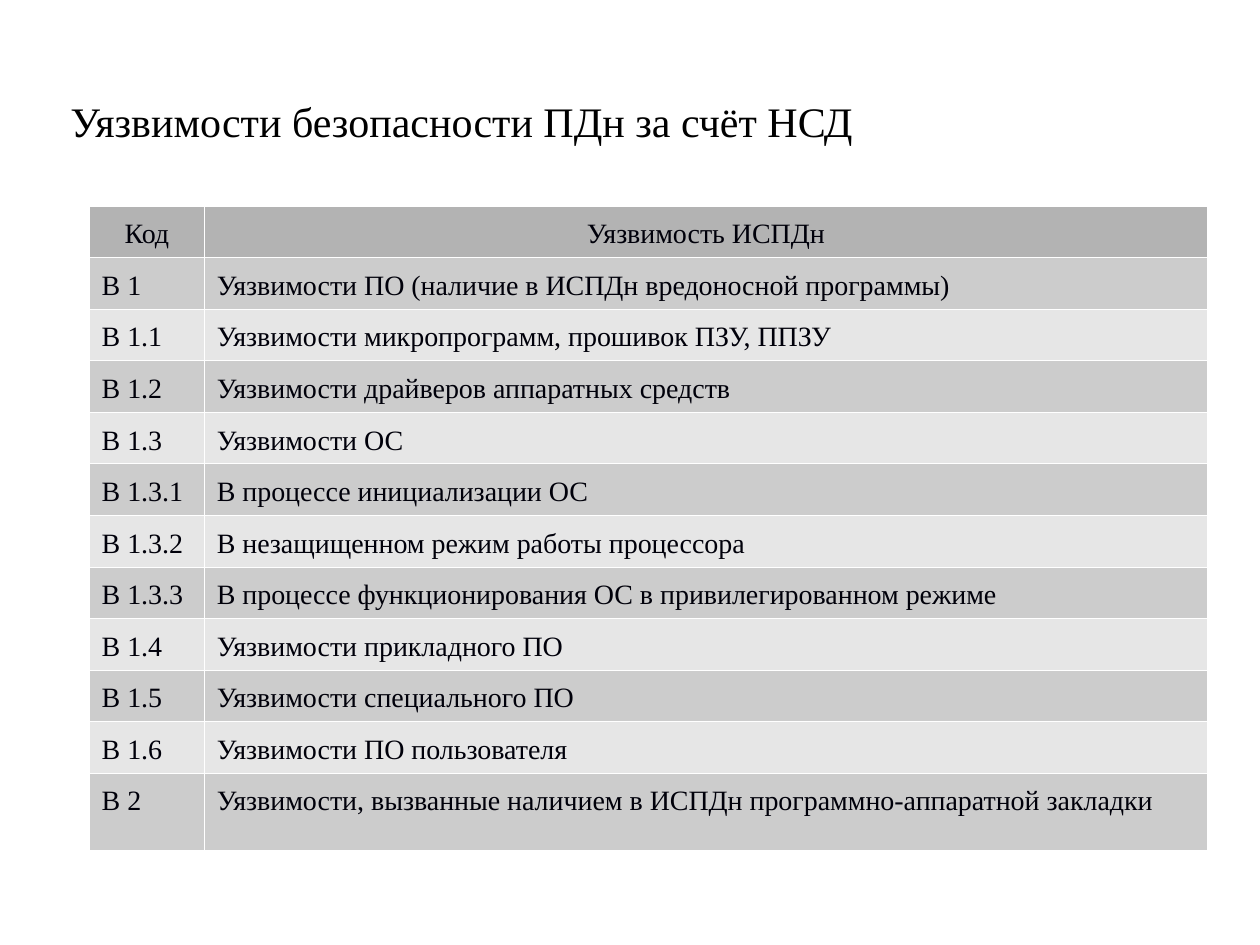
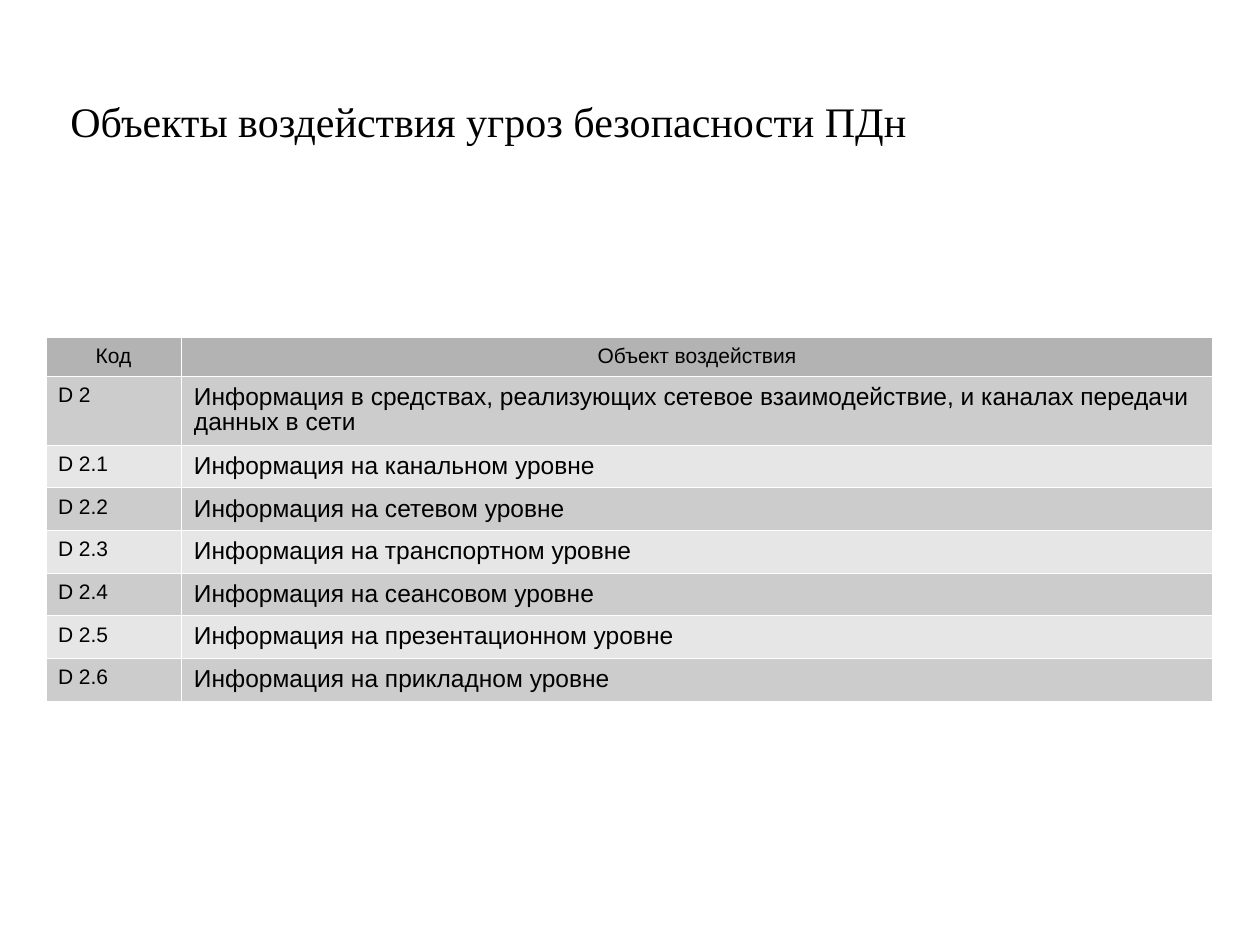
from dataclasses import dataclass

import pptx
import pptx.dml.color
import pptx.enum.text
import pptx.oxml
import pptx.oxml.ns
import pptx.util
from pptx.util import Cm


@dataclass(frozen=True)
class Theme:
    title_font: str = "Times New Roman"
    title_size: int = 24
    title_color: str = "000000"
    header_fill: str = "B3B3B3"
    band_fills: tuple = ("CCCCCC", "E6E6E6")
    border_color: str = "FFFFFF"
    border_width: float = 0.06


@dataclass(frozen=True)
class TableStyle:
    font: str
    color: str
    code_size: int
    text_size: int
    line_spacing: float
    top_margin: float


THEME = Theme()
SERIF_TABLE = TableStyle("Times New Roman", "00000A", 16, 16, 0.81, 0.36)
SANS_TABLE = TableStyle("Arial", "000000", 12, 14, 0.89, 0.2)

VULNERABILITIES = [
    ("Код", "Уязвимость ИСПДн"),
    ("В 1", "Уязвимости ПО (наличие в ИСПДн вредоносной программы)"),
    ("В 1.1", "Уязвимости микропрограмм, прошивок ПЗУ, ППЗУ"),
    ("В 1.2", "Уязвимости драйверов аппаратных средств"),
    ("В 1.3", "Уязвимости ОС"),
    ("В 1.3.1", "В процессе инициализации ОС"),
    ("В 1.3.2", "В незащищенном режим работы процессора"),
    ("В 1.3.3", "В процессе функционирования ОС в привилегированном режиме"),
    ("В 1.4", "Уязвимости прикладного ПО"),
    ("В 1.5", "Уязвимости специального ПО"),
    ("В 1.6", "Уязвимости ПО пользователя"),
    ("В 2", "Уязвимости, вызванные наличием в ИСПДн программно-аппаратной закладки"),
]

TARGETS = [
    ("Код", "Объект воздействия"),
    ("D 2", "Информация в средствах, реализующих сетевое взаимодействие, "
            "и каналах передачи данных в сети"),
    ("D 2.1", "Информация на канальном уровне"),
    ("D 2.2", "Информация на сетевом уровне"),
    ("D 2.3", "Информация на транспортном уровне"),
    ("D 2.4", "Информация на сеансовом уровне"),
    ("D 2.5", "Информация на презентационном уровне"),
    ("D 2.6", "Информация на прикладном уровне"),
]


class Deck:
    def __init__(self, theme):
        self.theme = theme
        self.presentation = pptx.Presentation()
        self.presentation.slide_width = Cm(25.4)
        self.presentation.slide_height = Cm(19.05)
        self.slide = None

    def add_slide(self, title):
        blank_layout = self.presentation.slide_layouts[6]
        self.slide = self.presentation.slides.add_slide(blank_layout)
        self.add_title(title)

    def style_font(self, paragraph, name, size, color):
        paragraph.font.name = name
        paragraph.font.size = pptx.util.Pt(size)
        paragraph.font.color.rgb = pptx.dml.color.RGBColor.from_string(color)

    def add_title(self, text):
        shape = self.slide.shapes.add_textbox(Cm(1.17), Cm(1.8), Cm(22.63), Cm(1.8))
        shape.text_frame.word_wrap = True
        paragraph = shape.text_frame.paragraphs[0]
        paragraph.text = text
        self.style_font(paragraph, self.theme.title_font,
                        self.theme.title_size, self.theme.title_color)

    def add_table(self, rows, left, top, column_widths, row_heights, style):
        table = self.slide.shapes.add_table(
            len(rows), len(column_widths), Cm(left), Cm(top),
            Cm(sum(column_widths)), Cm(sum(row_heights))).table
        table.horz_banding = False
        for column, width in zip(table.columns, column_widths):
            column.width = Cm(width)
        for index, (row, height) in enumerate(zip(table.rows, row_heights)):
            row.height = Cm(height)
            is_header = index == 0
            fill = self.theme.header_fill if is_header else self.theme.band_fills[(index - 1) % 2]
            code_cell, text_cell = row.cells
            code, text = rows[index]
            text_size = style.code_size if is_header else style.text_size
            self.fill_cell(code_cell, code, style.code_size, fill, is_header, style)
            self.fill_cell(text_cell, text, text_size, fill, is_header, style)

    def fill_cell(self, cell, text, size, fill, centred, style):
        cell.margin_left = cell.margin_right = Cm(0.25)
        cell.margin_top = Cm(style.top_margin)
        cell.margin_bottom = Cm(0.13)
        self.add_borders(cell)
        cell.fill.solid()
        cell.fill.fore_color.rgb = pptx.dml.color.RGBColor.from_string(fill)
        paragraph = cell.text_frame.paragraphs[0]
        paragraph.text = text
        paragraph.line_spacing = style.line_spacing
        if centred:
            paragraph.alignment = pptx.enum.text.PP_ALIGN.CENTER
        self.style_font(paragraph, style.font, size, style.color)

    def add_borders(self, cell):
        properties = cell._tc.get_or_add_tcPr()
        width = pptx.util.Pt(self.theme.border_width)
        for side in ("lnL", "lnR", "lnT", "lnB"):
            properties.append(pptx.oxml.parse_xml(
                f'<a:{side} {pptx.oxml.ns.nsdecls("a")} w="{width}"><a:solidFill>'
                f'<a:srgbClr val="{self.theme.border_color}"/></a:solidFill></a:{side}>'))


def main():
    deck = Deck(THEME)

    deck.add_slide("Уязвимости безопасности ПДн за счёт НСД")
    deck.add_table(VULNERABILITIES, 1.8, 4.15, (2.32, 20.22),
                   [1] * 11 + [1.55], SERIF_TABLE)

    deck.add_slide("Объекты воздействия угроз безопасности ПДн")
    deck.add_table(TARGETS, 0.92, 6.8, (2.74, 20.78),
                   [0.74, 1.37] + [0.85] * 6, SANS_TABLE)

    deck.presentation.save("out.pptx")


if __name__ == "__main__":
    main()
